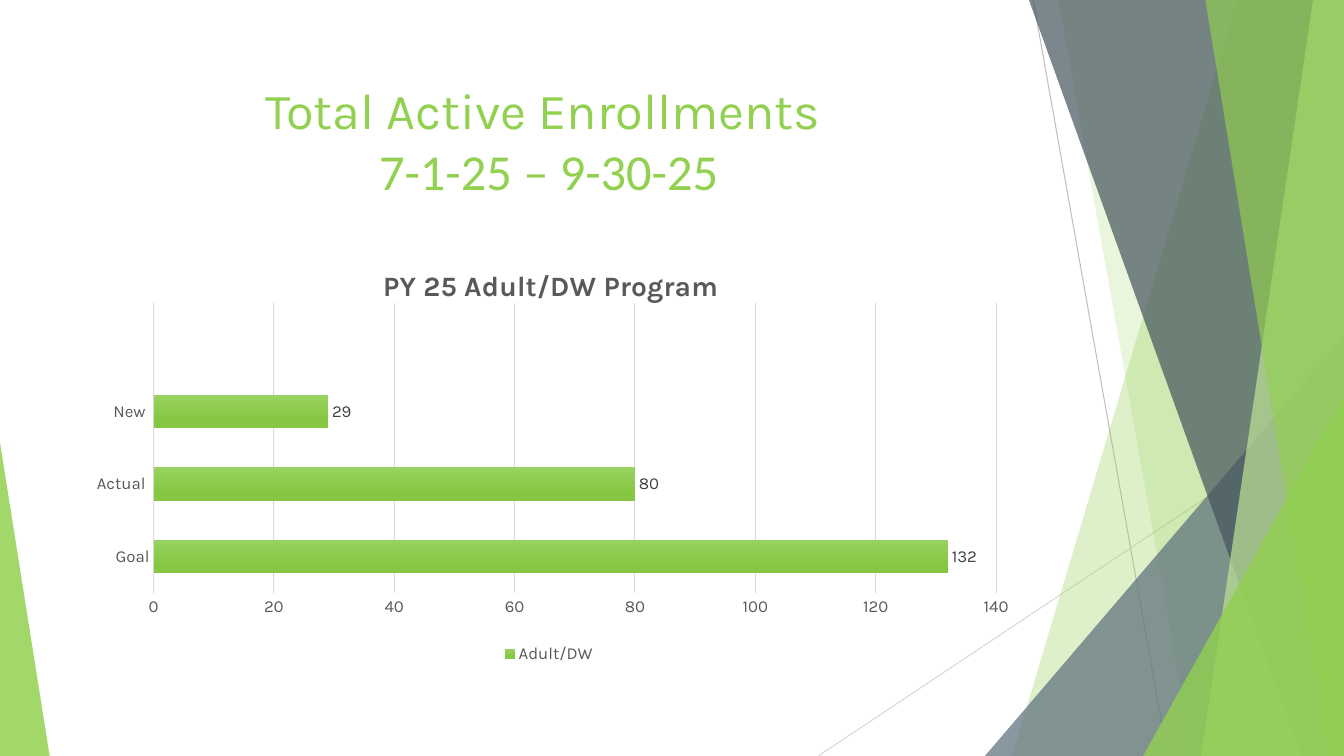
from lxml import etree
from pptx import Presentation
from pptx.chart.data import CategoryChartData
from pptx.dml.color import RGBColor
from pptx.enum.chart import XL_CHART_TYPE as ChartType
from pptx.enum.chart import XL_LABEL_POSITION as LabelPosition
from pptx.enum.chart import XL_LEGEND_POSITION as LegendPosition
from pptx.enum.chart import XL_TICK_MARK as TickMark
from pptx.enum.shapes import MSO_CONNECTOR as Connector
from pptx.enum.shapes import MSO_SHAPE as Shape
from pptx.enum.text import MSO_ANCHOR as Anchor
from pptx.enum.text import PP_ALIGN as Align
from pptx.oxml import parse_xml
from pptx.oxml.ns import nsdecls, qn
from pptx.util import Pt

WIDTH, HEIGHT = 960, 540
GREEN, PALE_GREEN = "92D050", "BEE396"
SLATE, DARK_SLATE = "5C707C", "45545D"
GRAY, LIGHT_GRAY = "595959", "D9D9D9"


def color(hex_string):
    return RGBColor.from_string(hex_string)


def style_font(font, size, hex_string, name="Karla", bold=False):
    font.size, font.name, font.bold = Pt(size), name, bold
    font.color.rgb = color(hex_string)


def paint(shape, hex_string, opacity):
    """Fill with a flat colour at an opacity in percent, without outline."""
    shape.shadow.inherit = False
    shape.line.fill.background()
    shape.fill.solid()
    shape.fill.fore_color.rgb = color(hex_string)
    fill_color = shape.fill._xPr.find(qn("a:solidFill"))[0]
    etree.SubElement(fill_color, qn("a:alpha"), val=str(opacity * 1000))


def add_hairline(slide, start, end, hex_string):
    line = slide.shapes.add_connector(
        Connector.STRAIGHT, *(Pt(value) for value in start + end))
    line.line.color.rgb = color(hex_string)
    line.line.width = Pt(0.75)
    etree.SubElement(line._element.spPr, qn("a:effectLst"))


def add_band(slide, top_x, bottom_x, hex_string, opacity):
    """Full-height band from a slanted left edge to the right slide edge."""
    builder = slide.shapes.build_freeform(Pt(top_x), Pt(0), scale=1.0)
    corners = [(WIDTH, 0), (WIDTH, HEIGHT), (bottom_x, HEIGHT)]
    builder.add_line_segments([(Pt(x), Pt(y)) for x, y in corners], close=True)
    paint(builder.convert_to_shape(), hex_string, opacity)


def add_corner(slide, left, top, width, apex, hex_string, opacity):
    """Triangle standing on the bottom slide edge."""
    triangle = slide.shapes.add_shape(
        Shape.ISOSCELES_TRIANGLE, Pt(left), Pt(top), Pt(width), Pt(HEIGHT - top))
    triangle.adjustments[0] = apex
    paint(triangle, hex_string, opacity)


def add_backdrop(slide):
    add_hairline(slide, (738, 0), (834, HEIGHT), "BFBFBF")
    add_hairline(slide, (WIDTH, 290), (584.5, HEIGHT), LIGHT_GRAY)
    add_band(slide, 884, 723, GREEN, 30)
    add_band(slide, 756, 852, GREEN, 20)
    add_corner(slide, 703.5, 240, WIDTH - 703.5, 1, SLATE, 72)
    add_band(slide, 735, 929.5, DARK_SLATE, 70)
    add_band(slide, 938, 858, PALE_GREEN, 70)
    add_band(slide, 861, 949, GREEN, 65)
    add_corner(slide, 816.5, 283, WIDTH - 816.5, 1, GREEN, 80)
    add_corner(slide, 0, 316, 35.5, 0, GREEN, 85)


def add_heading(slide, left, top, width, height):
    box = slide.shapes.add_textbox(Pt(left), Pt(top), Pt(width), Pt(height))
    frame = box.text_frame
    frame.word_wrap = True
    frame.vertical_anchor = Anchor.MIDDLE
    paragraph = frame.paragraphs[0]
    paragraph.alignment = Align.CENTER
    first = paragraph.add_run()
    first.text = "Total Active Enrollments "
    style_font(first.font, 36, GREEN)
    paragraph.add_line_break()
    second = paragraph.add_run()
    second.text = "7-1-25 – 9-30-25"
    style_font(second.font, 36, GREEN, "Calibri")


def set_layout(parent, inner=False, **fractions):
    """Place a chart part by fractions of the chart's size."""
    for old in parent.findall(qn("c:layout")):
        parent.remove(old)
    values = {"xMode": "edge", "yMode": "edge", **fractions}
    if inner:
        values = {"layoutTarget": "inner", **values}
    parts = "".join(f'<c:{key} val="{value}"/>' for key, value in values.items())
    layout = parse_xml(f'<c:layout {nsdecls("c")}><c:manualLayout>{parts}'
                       '</c:manualLayout></c:layout>')
    text = parent.find(qn("c:tx"))
    parent.insert(0 if text is None else parent.index(text) + 1, layout)


def style_axes(chart):
    for axis in (chart.category_axis, chart.value_axis):
        axis.major_tick_mark = axis.minor_tick_mark = TickMark.NONE
        style_font(axis.tick_labels.font, 12, GRAY)
    category_line = chart.category_axis.format.line
    category_line.color.rgb = color(LIGHT_GRAY)
    category_line.width = Pt(1)
    value_axis = chart.value_axis
    value_axis.minimum_scale, value_axis.maximum_scale = 0, 140
    value_axis.major_unit = 20
    value_axis.format.line.fill.background()
    grid_line = value_axis.major_gridlines.format.line
    grid_line.color.rgb = color(LIGHT_GRAY)
    grid_line.width = Pt(0.75)


def style_bars(plot):
    plot.gap_width, plot.overlap = 115, -20
    plot.vary_by_categories = False
    series = plot.series[0]
    fill = series.format.fill
    fill.gradient()
    fill.gradient_angle = 270
    stops = zip(fill.gradient_stops, [(0, "98D260"), (0.78, "86C741")])
    for stop, (position, hex_string) in stops:
        stop.position = position
        stop.color.rgb = color(hex_string)
    labels = series.data_labels
    labels.show_value = True
    labels.position = LabelPosition.OUTSIDE_END
    style_font(labels.font, 12, "404040")


def add_enrollment_chart(slide, left, top, width, height):
    data = CategoryChartData()
    data.categories = ["Goal", "Actual ", "New ", ""]
    data.add_series("Adult/DW", [132, 80, 29, None])
    chart = slide.shapes.add_chart(
        ChartType.BAR_CLUSTERED, Pt(left), Pt(top), Pt(width), Pt(height), data).chart
    style_font(chart.font, 10, "000000")
    chart.has_title = True
    run = chart.chart_title.text_frame.paragraphs[0].add_run()
    run.text = "PY 25 Adult/DW Program"
    style_font(run.font, 20, GRAY, bold=True)
    set_layout(chart.chart_title._element, x=0.32, y=0.05)
    chart.has_legend = True
    chart.legend.position = LegendPosition.BOTTOM
    chart.legend.include_in_layout = False
    style_font(chart.legend.font, 12, GRAY)
    style_axes(chart)
    style_bars(chart.plots[0])
    plot_area = chart._chartSpace.chart.plotArea
    set_layout(plot_area, inner=True, x=0.083, y=0.146, w=0.889, h=0.678)


def main():
    presentation = Presentation()
    presentation.slide_width, presentation.slide_height = Pt(WIDTH), Pt(HEIGHT)
    slide = presentation.slides.add_slide(presentation.slide_layouts[6])
    add_backdrop(slide)
    add_heading(slide, 53.5, 48, 677, 104)
    add_enrollment_chart(slide, 53.5, 172, 677, 305)
    presentation.save("out.pptx")


if __name__ == "__main__":
    main()
